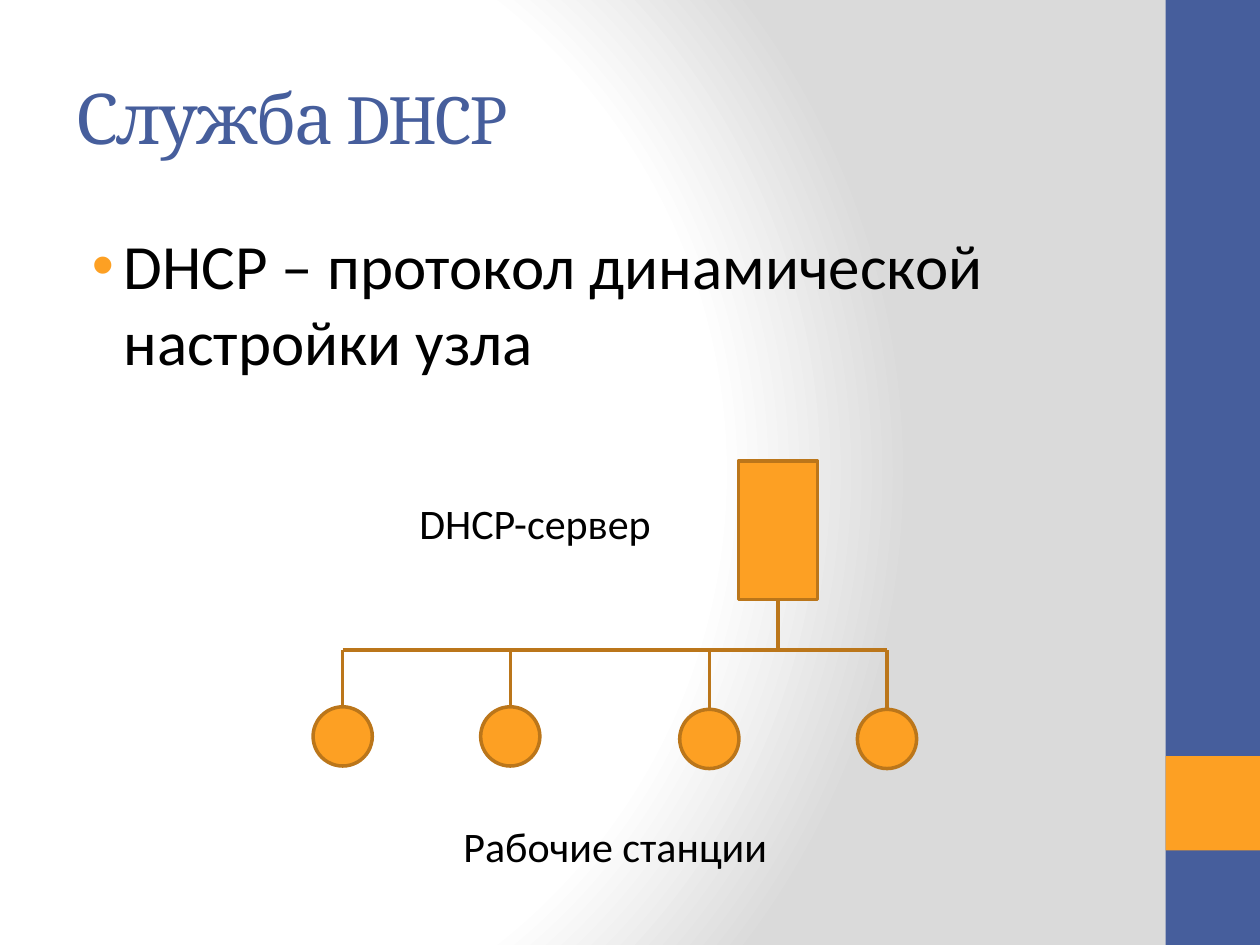
import pptx
import pptx.util
import pptx.dml.color
import pptx.enum.shapes
import pptx.enum.text
import pptx.oxml
import pptx.oxml.ns
import lxml.etree

BLUE, GOLD, RUST, BLACK = "465E9C", "FDA023", "BB761A", "000000"
TITLE = "Служба DHCP"
BODY = "DHCP – протокол динамической настройки узла"
NOTES = [("DHCP-сервер", 3.23, 3.9, 2.13), ("Рабочие станции", 3.58, 6.46, 2.69)]
HOSTS = [(2.72, 5.61), (4.05, 5.61), (5.63, 5.63), (7.04, 5.63)]
SERVER = (5.86, 3.66, 0.63, 1.1)
BUS, DIAM, BAND = 5.16, 0.47, 0.75
STOPS = [(0, "FFFFFF"), (75, "FFFFFF"), (100, "DADADA")]

Inches, Pt = pptx.util.Inches, pptx.util.Pt
MSO = pptx.enum.shapes.MSO_SHAPE
qn = pptx.oxml.ns.qn


def paint(target, color):
    target.solid()
    target.fore_color.rgb = pptx.dml.color.RGBColor.from_string(color)


def box(kind, left, top, width, height, color, edge=None):
    shape = slide.shapes.add_shape(kind, *map(Inches, (left, top, width, height)))
    shape.shadow.inherit = False
    paint(shape.fill, color)
    if edge:
        paint(shape.line.fill, edge)
        shape.line.width = Pt(2)
    else:
        shape.line.fill.background()


def wire(*ends):
    line = slide.shapes.add_connector(
        pptx.enum.shapes.MSO_CONNECTOR.STRAIGHT, *map(Inches, ends))
    paint(line.line.fill, RUST)
    line.line.width = Pt(2)
    lxml.etree.SubElement(line._element.spPr, qn("a:effectLst"))


def write(shape, text, size, face, color):
    para = shape.text_frame.paragraphs[0]
    para.text = text
    para.alignment = pptx.enum.text.PP_ALIGN.LEFT
    para.font.size, para.font.name = Pt(size), face
    paint(para.font.fill, color)
    return para


def place(shape, left, top, width, height):
    shape.left, shape.top = Inches(left), Inches(top)
    shape.width, shape.height = Inches(width), Inches(height)


def shade():
    paint(slide.background.fill, "FFFFFF")
    flat = next(slide._element.iter(qn("p:bgPr")))[0]
    stops = "".join(f'<a:gs pos="{pos * 1000}"><a:srgbClr val="{color}"/></a:gs>'
                    for pos, color in STOPS)
    flat.getparent().replace(flat, pptx.oxml.parse_xml(
        f'<a:gradFill {pptx.oxml.ns.nsdecls("a")} rotWithShape="1">'
        f'<a:gsLst>{stops}</a:gsLst><a:path path="circle">'
        '<a:fillToRect l="20000" t="50000" r="100000" b="50000"/>'
        '</a:path></a:gradFill>'))


deck = pptx.Presentation()
deck.slide_width, deck.slide_height = Inches(10), Inches(7.5)
slide = deck.slides.add_slide(deck.slide_layouts[1])
shade()

box(MSO.RECTANGLE, 10 - BAND, 0, BAND, 7.5, BLUE)
box(MSO.RECTANGLE, 10 - BAND, 6, BAND, BAND, GOLD)

title, body = slide.shapes.title, slide.placeholders[1]
place(title, 0.5, 0.3, 8.33, 1.25)
head = write(title, TITLE, 40, "Cambria", BLUE)
title.text_frame.vertical_anchor = pptx.enum.text.MSO_ANCHOR.MIDDLE
head.runs[0].font._element.set("spc", "-100")

place(body, 0.5, 1.75, 8.33, 5.25)
props = write(body, BODY, 36, "Calibri", BLACK)._p.get_or_add_pPr()
props.set("marL", str(Inches(0.38)))
props.set("indent", str(Inches(-0.25)))
bullet = f'<a:buClr {pptx.oxml.ns.nsdecls("a")}><a:srgbClr val="{GOLD}"/></a:buClr>'
mark = pptx.oxml.parse_xml(bullet)
props.find(qn("a:defRPr")).addprevious(mark)
mark.addnext(props.makeelement(qn("a:buChar"), {"char": "•"}))

for text, left, top, width in NOTES:
    note = slide.shapes.add_textbox(*map(Inches, (left, top, width, 0.5)))
    note.text_frame.word_wrap = True
    write(note, text, 24, "Calibri", BLACK)

wire(HOSTS[0][0], BUS, HOSTS[-1][0], BUS)
mid = SERVER[0] + SERVER[2] / 2
wire(mid, SERVER[1] + SERVER[3], mid, BUS)
for x, y in HOSTS:
    wire(x, BUS, x, y)
    box(MSO.OVAL, x - DIAM / 2, y, DIAM, DIAM, GOLD, RUST)
box(MSO.RECTANGLE, *SERVER, GOLD, RUST)

deck.save("out.pptx")
